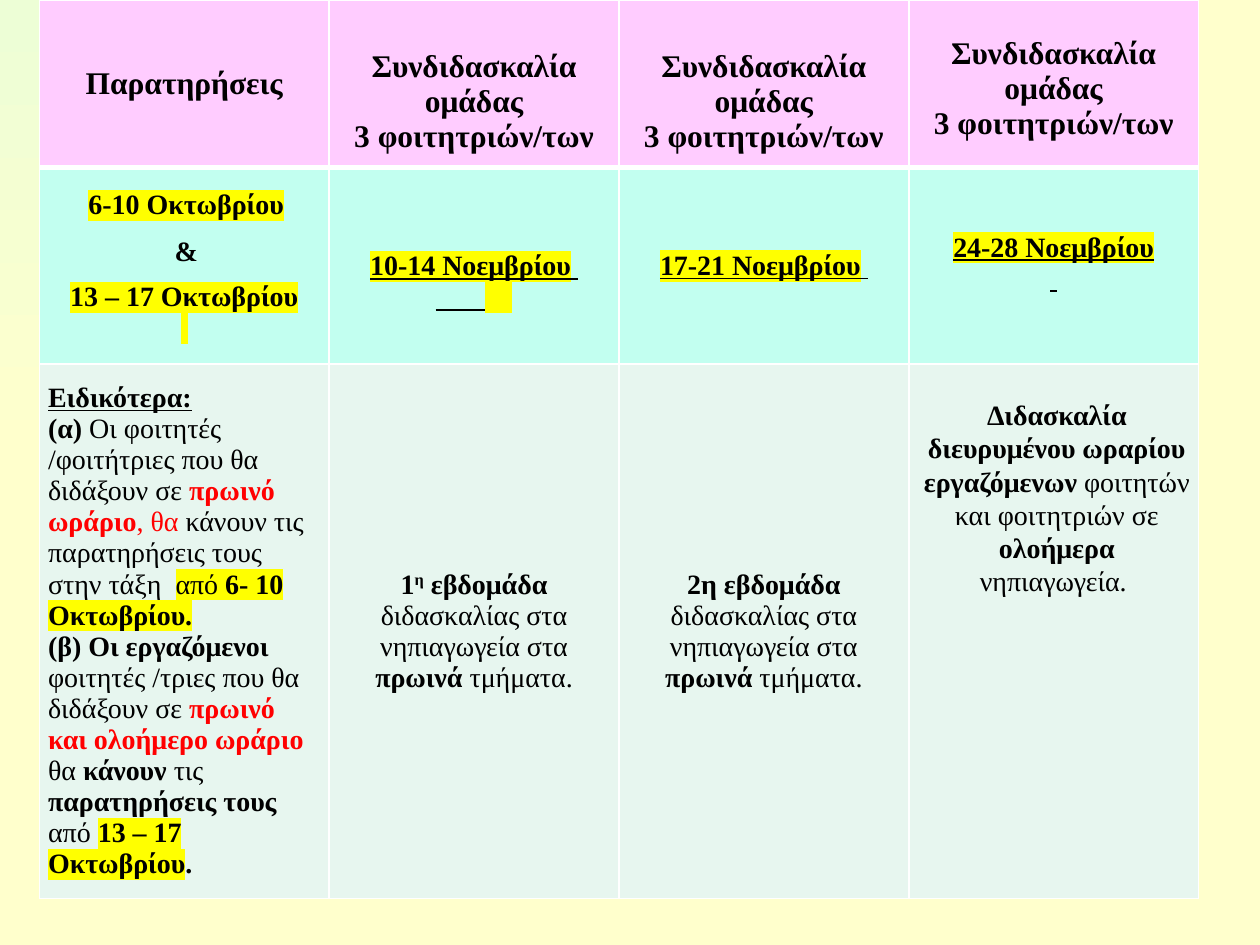
from lxml import etree
from pptx import Presentation
from pptx.dml.color import RGBColor
from pptx.enum import text
from pptx.oxml.ns import qn
from pptx.util import Pt

THEME = dict(
    font="Times New Roman", head=18, body=16,
    ink="000000", red="FF0000", mark="FFFF00", line="FFFFFF",
    back=("EDFED6", "FFFFCC"), rows=("FFCCFF", "C2FFF0", "E7F6EF"),
)

# Run styles: b bold, u underline, y highlight, r red, s superscript
GROUP = [[("Συνδιδασκαλία ομάδας", "b")], [("3 φοιτητριών/των", "b")]]

NOTES = [
    [("Ειδικότερα:", "bu")],
    [("(α)", "b"), (" Οι φοιτητές /φοιτήτριες που θα διδάξουν σε ", ""),
     ("πρωινό ωράριο", "br"), (", θα", "r"),
     (" κάνουν τις παρατηρήσεις τους στην τάξη  ", ""),
     ("από ", "y"), ("6- 10 Οκτωβρίου.", "by")],
    [("(β) Οι εργαζόμενοι", "b"), (" φοιτητές /τριες που θα διδάξουν σε ", ""),
     ("πρωινό και ολοήμερο ωράριο ", "br"), ("θα ", ""), ("κάνουν ", "b"),
     ("τις ", ""), ("παρατηρήσεις τους ", "b"), ("από ", ""),
     ("13 – 17 Οκτωβρίου", "by"), (".", "b")],
]
WATCH = [[("6-10 Οκτωβρίου", "by")], [("&", "b")],
         [("13 – 17 Οκτωβρίου", "by")], [(" ", "by")]]
FIRST = [
    [("1", "b"), ("η", "bs"), (" εβδομάδα", "b"),
     (" διδασκαλίας στα νηπιαγωγεία στα ", ""), ("πρωινά", "b"), (" τμήματα.", "")],
]
SECOND = [
    [("2η εβδομάδα", "b"), (" διδασκαλίας στα νηπιαγωγεία στα ", ""),
     ("πρωινά ", "b"), ("τμήματα.", "")],
]
LONG = [
    [("Διδασκαλία διευρυμένου ωραρίου εργαζόμενων", "b"),
     (" φοιτητών και φοιτητριών σε ", ""), ("ολοήμερα ", "b"), ("νηπιαγωγεία. ", "")],
]
NOV = [
    [[("10-14 Νοεμβρίου", "buy"), (" ", "bu")],
     [("       ", "bu"), ("    ", "by")]],
    [[("17-21 Νοεμβρίου", "buy"), (" ", "bu")]],
    [[("24-28 Νοεμβρίου", "buy")], [(" ", "bu")]],
]

# Each cell: paragraphs, then layout options
# drop: top inset; top: anchor to top; left: left aligned
# pad: indent, line spacing and space after, for the first "padded" paragraphs
CELLS = [
    [([[("Παρατηρήσεις", "b")]], {}), (GROUP, dict(drop=20.7)),
     (GROUP, dict(drop=20.7)), (GROUP, dict(drop=20.7, top=True))],
    [(WATCH, dict(pad=(2.16, 1.06, 8), padded=2)), (NOV[0], dict(drop=18.4)),
     (NOV[1], {}), (NOV[2], dict(drop=36.8, top=True))],
    [(NOTES, dict(left=True)), (FIRST, {}), (SECOND, {}),
     (LONG, dict(drop=19.7, top=True, pad=(3.6, 1.07, 8), padded=1))],
]
LEFT, TOP, WIDTH = 22.5, 0, 165.6
HEIGHTS = (95.8, 112.3, 305.3)


def write(para, words, style, size):
    run = para.add_run()
    run.text = words
    font = run.font
    form = dict(name=THEME["font"], size=Pt(size), bold="b" in style,
                underline="u" in style)
    for key, val in form.items():
        setattr(font, key, val)
    font.color.rgb = RGBColor.from_string(THEME["red" if "r" in style else "ink"])
    props = run._r.get_or_add_rPr()
    if "s" in style:
        props.set("baseline", "30000")
    if "y" in style:
        mark = etree.Element(qn("a:highlight"))
        etree.SubElement(mark, qn("a:srgbClr"), val=THEME["mark"])
        props.find(qn("a:solidFill")).addnext(mark)


def border(cell, row):
    props = cell._tc.get_or_add_tcPr()
    wide = {"T": 3 if row == 1 else 1, "B": 3 if row == 0 else 1}
    for spot, side in enumerate("LRTB"):
        line = etree.Element(qn("a:ln" + side), w=str(Pt(wide.get(side, 1))))
        fill = etree.SubElement(line, qn("a:solidFill"))
        etree.SubElement(fill, qn("a:srgbClr"), val=THEME["line"])
        props.insert(spot, line)


def fill_cell(cell, row, paras, drop=0, top=False, left=False, pad=None, padded=0):
    anchor = text.MSO_ANCHOR.TOP if top else text.MSO_ANCHOR.MIDDLE
    form = dict(margin_left=Pt(5), margin_right=Pt(5), margin_top=Pt(drop),
                margin_bottom=0, vertical_anchor=anchor)
    for key, val in form.items():
        setattr(cell, key, val)
    cell.fill.solid()
    cell.fill.fore_color.rgb = RGBColor.from_string(THEME["rows"][row])
    border(cell, row)
    frame = cell.text_frame
    for num, runs in enumerate(paras):
        para = frame.add_paragraph() if num else frame.paragraphs[0]
        para.alignment = text.PP_ALIGN.LEFT if left else text.PP_ALIGN.CENTER
        if num < padded:
            indent, para.line_spacing, after = pad
            para.space_after = Pt(after)
            para._p.get_or_add_pPr().set("marL", str(Pt(indent)))
        for words, style in runs:
            write(para, words, style, THEME["body" if row else "head"])


def paint(slide):
    fill = slide.background.fill
    fill.gradient()
    for stop, tone in zip(fill.gradient_stops, THEME["back"]):
        stop.color.rgb = RGBColor.from_string(tone)
    # Spread the gradient from the top left corner
    line = next(slide.element.iter(qn("a:lin")))
    shade = etree.Element(qn("a:path"), {"path": "rect"})
    etree.SubElement(shade, qn("a:fillToRect"), r="100000", b="100000")
    line.getparent().replace(line, shade)


def main():
    deck = Presentation()
    deck.slide_width, deck.slide_height = Pt(720), Pt(540)
    slide = deck.slides.add_slide(deck.slide_layouts[6])
    paint(slide)

    # Schedule table
    count = len(CELLS[0])
    table = slide.shapes.add_table(
        len(CELLS), count, Pt(LEFT), Pt(TOP),
        Pt(WIDTH * count), Pt(sum(HEIGHTS))).table
    table.horz_banding = False
    for col in table.columns:
        col.width = Pt(WIDTH)
    for row, (high, cells) in enumerate(zip(HEIGHTS, CELLS)):
        table.rows[row].height = Pt(high)
        for col, (paras, opts) in enumerate(cells):
            fill_cell(table.cell(row, col), row, paras, **opts)
    deck.save("out.pptx")


if __name__ == "__main__":
    main()
